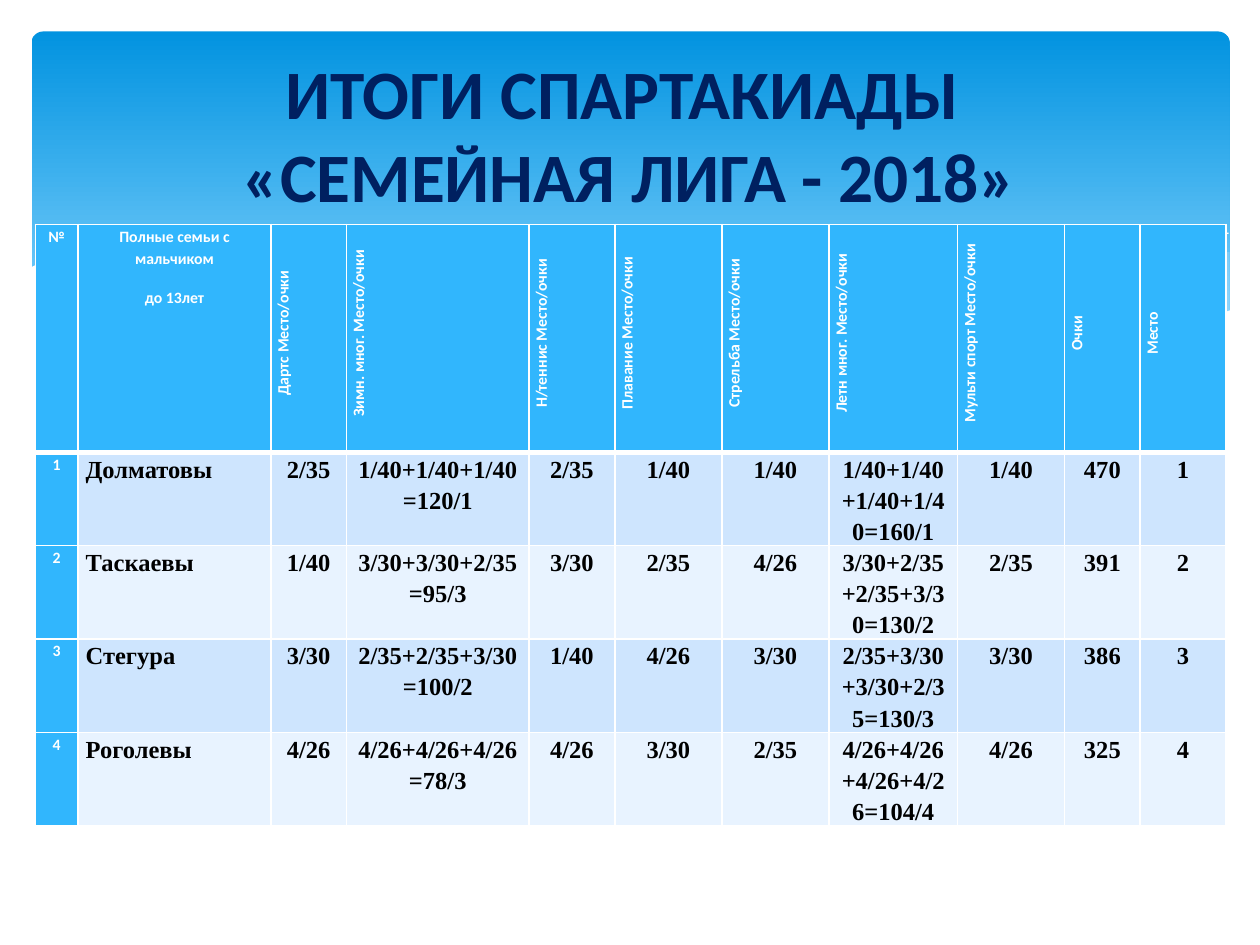
import pptx
import pptx.util
import pptx.dml.color
import pptx.enum.dml
import pptx.enum.shapes
import pptx.enum.text
import pptx.oxml
import pptx.oxml.ns

Inches = pptx.util.Inches
Pt = pptx.util.Pt
RGBColor = pptx.dml.color.RGBColor
ALIGN = pptx.enum.text.PP_ALIGN

WHITE = RGBColor(0xFF, 0xFF, 0xFF)
BLACK = RGBColor(0x00, 0x00, 0x00)
NAVY = RGBColor(0x00, 0x20, 0x60)
SKY_TOP = RGBColor(0x02, 0x93, 0xE0)
SKY_BOTTOM = RGBColor(0x83, 0xD3, 0xFE)
MIST = RGBColor(0xC6, 0xE7, 0xFC)
ACCENT = RGBColor(0x31, 0xB6, 0xFD)
BAND_DARK = RGBColor(0xCE, 0xE5, 0xFE)
BAND_LIGHT = RGBColor(0xE8, 0xF3, 0xFF)

RIGHT_WAVE = [
    (9.52, .16), (9.12, .23), (8.38, .39), (7.56, .58), (6.38, .81), (7.09, .9),
    (7.8, .94), (8.4, .92), (8.9, .83), (9.26, .73), (9.53, .63), (9.53, .16)]
MIDDLE_WAVE = [
    (8.7, .89), (8.14, .81), (7.52, .7), (6.83, .56), (6.06, .38), (5.46, .24),
    (4.91, .14), (4.42, .07), (3.97, .03), (3.57, .01), (3.21, .02), (2.63, .07),
    (3.19, .15), (3.81, .27), (4.68, .48), (5.43, .64), (6.11, .77), (6.72, .86),
    (7.25, .92), (7.84, .94), (8.34, .93)]
LONG_CURVE = [
    (2.86, .11), (3.12, .07), (3.51, .04), (3.93, .03), (4.46, .05), (5.1, .1),
    (5.85, .2), (6.42, .29), (7.04, .42), (7.72, .57), (8.46, .77), (8.84, .88)]
SHORT_CURVE = [
    (5.9, .73), (6.49, .57), (6.97, .45), (7.53, .32), (8.13, .2), (8.58, .12),
    (9.01, .06), (9.52, .01)]
WHITE_WAVE = [
    (9.54, .62), (9.27, .72), (8.97, .81), (8.64, .87), (8.27, .91), (7.86, .93),
    (7.38, .91), (6.85, .86), (6.25, .78), (5.56, .66), (4.8, .49), (4.24, .36),
    (3.68, .23), (3.17, .13), (2.69, .06), (2.27, .02), (1.88, 0), (1.54, 0),
    (1.23, .01), (.96, .03), (.72, .07), (.44, .13), (.23, .19), (.06, .26),
    (0, .29), (0, 1.45), (9.54, 1.45)]

COLUMNS = [0.34, 1.53, 0.6, 1.45, 0.68, 0.85, 0.85, 1.02, 0.85, 0.6, 0.68]
ROWS = [1.81, 0.66, 0.71, 0.66, 0.73]
HEADERS = [
    "№", "Полные семьи с мальчиком\nдо 13лет", "Дартс Место/очки",
    "Зимн. мног. Место/очки", "Н/теннис Место/очки", "Плавание Место/очки",
    "Стрельба Место/очки", "Летн мног. Место/очки", "Мульти спорт Место/очки",
    "Очки", "Место"]
RESULTS = [
    ["1", "Долматовы", "2/35", "1/40+1/40+1/40=120/1", "2/35", "1/40", "1/40",
     "1/40+1/40+1/40+1/40=160/1", "1/40", "470", "1"],
    ["2", "Таскаевы", "1/40", "3/30+3/30+2/35=95/3", "3/30", "2/35", "4/26",
     "3/30+2/35+2/35+3/30=130/2", "2/35", "391", "2"],
    ["3", "Стегура", "3/30", "2/35+2/35+3/30=100/2", "1/40", "4/26", "3/30",
     "2/35+3/30+3/30+2/35=130/3", "3/30", "386", "3"],
    ["4", "Роголевы", "4/26", "4/26+4/26+4/26=78/3", "4/26", "3/30", "2/35",
     "4/26+4/26+4/26+4/26=104/4", "4/26", "325", "4"]]


def write(tf, text, *, size, font, color, align=ALIGN.CENTER, spacing=None,
          after=None, indent=0):
    for i, line in enumerate(text.split("\n")):
        p = tf.add_paragraph() if i else tf.paragraphs[0]
        p.alignment = align
        p.line_spacing = spacing
        if after is not None:
            p.space_after = Pt(after)
        if indent:
            p._p.get_or_add_pPr().set("marL", str(Inches(indent)))
        for k, part in enumerate(line.split("\v")):
            if k:
                p.add_line_break()
            r = p.add_run()
            r.text = part
            r.font.size = Pt(size)
            r.font.name = font
            r.font.bold = True
            r.font.color.rgb = color


def sky_panel(s, left, top, width, height):
    sp = s.shapes.add_shape(
        pptx.enum.shapes.MSO_SHAPE.ROUNDED_RECTANGLE,
        Inches(left), Inches(top), Inches(width), Inches(height))
    sp.shadow.inherit = False
    sp.adjustments[0] = 0.034
    sp.line.fill.background()
    sp.fill.gradient()
    sp.fill.gradient_angle = 270
    for stop, place, color in zip(sp.fill.gradient_stops, (0, 0.9), (SKY_TOP, SKY_BOTTOM)):
        stop.position = place
        stop.color.rgb = color


def wave(s, left, top, points, fill=None, alpha=100):
    spots = [(Inches(left + x), Inches(top + y)) for x, y in points]
    builder = s.shapes.build_freeform(*spots[0])
    builder.add_line_segments(spots[1:], close=fill is not None)
    sp = builder.convert_to_shape()
    sp.shadow.inherit = False
    if fill is None:
        sp.fill.background()
        sp.line.color.rgb = WHITE
        sp.line.width = Pt(0)
        return
    sp.line.fill.background()
    sp.fill.solid()
    sp.fill.fore_color.rgb = fill
    if alpha < 100:
        clr = sp._element.spPr.find(".//" + pptx.oxml.ns.qn("a:srgbClr"))
        clr.append(pptx.oxml.parse_xml(
            f'<a:alpha {pptx.oxml.ns.nsdecls("a")} val="{alpha * 1000}"/>'))


def waves(s, left, top):
    wave(s, left, top, RIGHT_WAVE, MIST, 29)
    wave(s, left, top, MIDDLE_WAVE, MIST, 40)
    wave(s, left, top, LONG_CURVE)
    wave(s, left, top, SHORT_CURVE)
    wave(s, left, top, WHITE_WAVE, WHITE)


def style_cell(cell, fill, bottom):
    tcPr = cell._tc.get_or_add_tcPr()
    for side, width in (("L", 1), ("R", 1), ("T", 1), ("B", bottom)):
        tcPr.append(pptx.oxml.parse_xml(
            f'<a:ln{side} {pptx.oxml.ns.nsdecls("a")} w="{Pt(width)}"><a:solidFill>'
            f'<a:srgbClr val="{WHITE}"/></a:solidFill></a:ln{side}>'))
    cell.fill.solid()
    cell.fill.fore_color.rgb = fill
    cell.margin_left = cell.margin_right = Inches(0.06)
    cell.margin_top = cell.margin_bottom = 0


def results_table(s, left, top, width, height):
    table = s.shapes.add_table(
        len(ROWS), len(COLUMNS), Inches(left), Inches(top),
        Inches(width), Inches(height)).table
    for column, size in zip(table.columns, COLUMNS):
        column.width = Inches(size)
    for row, size in zip(table.rows, ROWS):
        row.height = Inches(size)
    for i, values in enumerate([HEADERS] + RESULTS):
        for j, text in enumerate(values):
            cell = table.cell(i, j)
            label = i == 0 or j == 0
            band = BAND_DARK if i % 2 else BAND_LIGHT
            style_cell(cell, ACCENT if label else band, 1 if i else 3)
            if i == 0 and j > 1:
                cell._tc.get_or_add_tcPr().set("vert", "vert270")
            write(cell.text_frame, text,
                  size=9 if label else 14,
                  font="Calibri" if label else "Times New Roman",
                  color=WHITE if label else BLACK,
                  align=ALIGN.LEFT if i and j == 1 else ALIGN.CENTER,
                  spacing=1.15, after=10,
                  indent=0.08 if i == 0 and j > 1 else 0)


def title(s, left, top, width, height):
    tf = s.shapes.add_textbox(
        Inches(left), Inches(top), Inches(width), Inches(height)).text_frame
    tf.word_wrap = True
    tf.vertical_anchor = pptx.enum.text.MSO_ANCHOR.MIDDLE
    write(tf, "ИТОГИ СПАРТАКИАДЫ \v«СЕМЕЙНАЯ ЛИГА - 2018»",
          size=39.6, font="Calibri", color=NAVY)


def main():
    prs = pptx.Presentation()
    prs.slide_width = Inches(10)
    prs.slide_height = Inches(7.5)
    s = prs.slides.add_slide(prs.slide_layouts[6])
    sky_panel(s, 0.25, 0.25, 9.51, 2.7)
    waves(s, 0.23, 1.84)
    results_table(s, 0.28, 1.78, sum(COLUMNS), sum(ROWS))
    title(s, 0.5, 0.37, 9, 1.37)
    prs.save("out.pptx")


if __name__ == "__main__":
    main()
